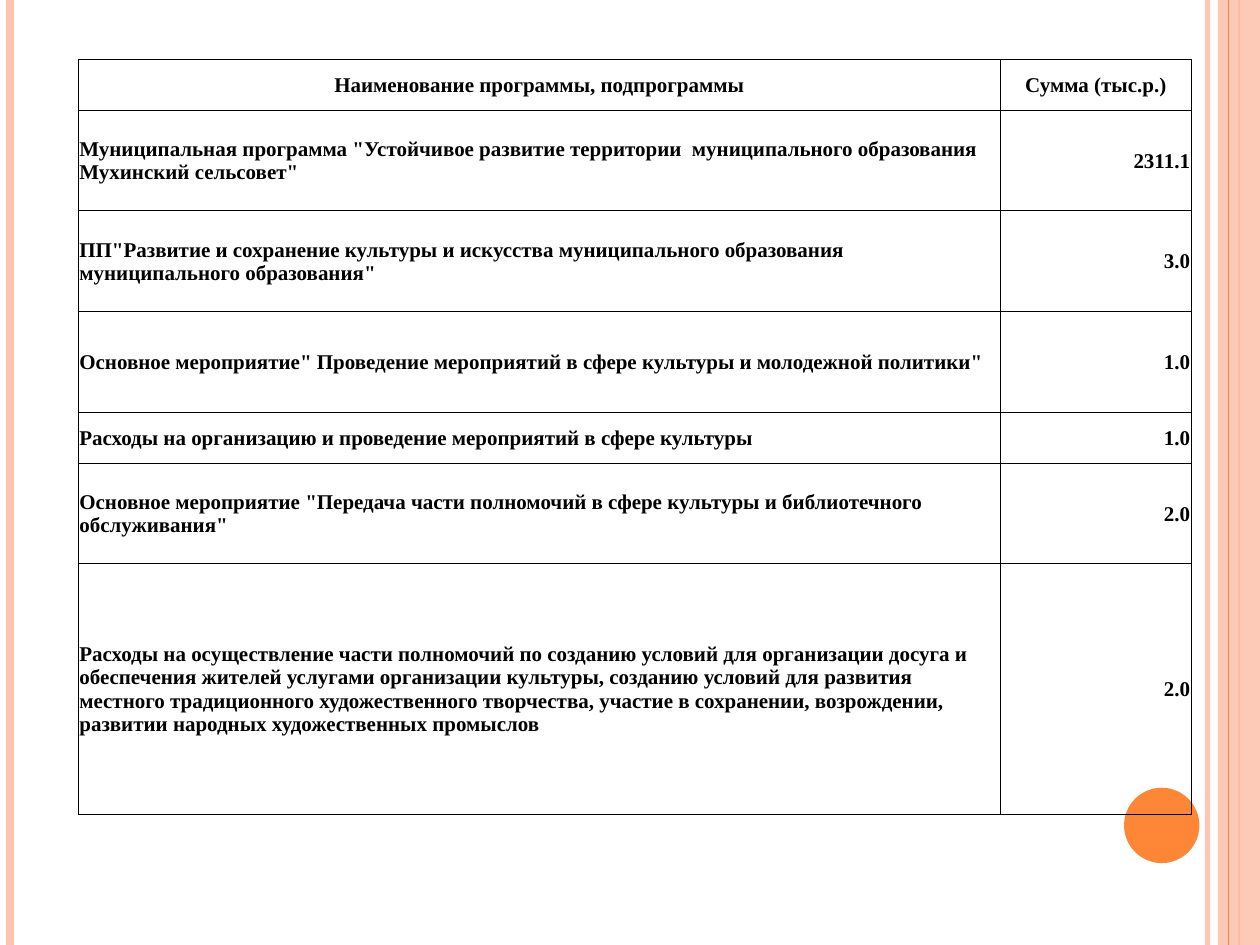
from lxml.etree import SubElement
from pptx import Presentation
from pptx.dml.color import RGBColor
from pptx.enum.shapes import MSO_CONNECTOR, MSO_SHAPE
from pptx.enum.text import MSO_ANCHOR, PP_ALIGN
from pptx.oxml.ns import qn
from pptx.util import Cm, Pt

COLORS = {"peach": "FEC3AE", "orange": "FE8637", "text": "000000", "border": "000000"}
WIDTH, HEIGHT = 25.4, 19.05

HEADER = ("Наименование программы, подпрограммы", "Сумма (тыс.р.)")
PROGRAMS = [
    ('Муниципальная программа "Устойчивое развитие территории  муниципального образования '
     'Мухинский сельсовет"', "2311.1"),
    ('ПП"Развитие и сохранение культуры и искусства муниципального образования '
     'муниципального образования"', "3.0"),
    ('Основное мероприятие" Проведение мероприятий в сфере культуры и молодежной политики"', "1.0"),
    ("Расходы на организацию и проведение мероприятий в сфере культуры", "1.0"),
    ('Основное мероприятие "Передача части полномочий в сфере культуры и библиотечного '
     'обслуживания"', "2.0"),
    ("Расходы на осуществление части полномочий по созданию условий для организации досуга и "
     "обеспечения жителей услугами организации культуры, созданию условий для развития "
     "местного традиционного художественного творчества, участие в сохранении, возрождении, "
     "развитии народных художественных промыслов", "2.0"),
]
COL_WIDTHS = (18.59, 3.84)
ROW_HEIGHTS = (1.03, 2.03, 2.03, 2.03, 1.03, 2.03, 5.05)
COL_ALIGNS = (PP_ALIGN.LEFT, PP_ALIGN.RIGHT)

STRIPES = [
    (24.34, "peach", 3, 93),
    (0.21, "peach", 4.5, 100),
    (24.98, "orange", 1.5, 100),
]
EDGE_LINE = (24.77, "orange", 0.75, 100)
BAND = (MSO_SHAPE.RECTANGLE, 24.55, 0, 0.85, HEIGHT, "peach", 87)
CIRCLE = (MSO_SHAPE.OVAL, 22.66, 15.88, 1.52, 1.52, "orange", 100)

CELL_FORMAT = {
    "vertical_anchor": MSO_ANCHOR.MIDDLE,
    "margin_left": Cm(0.02),
    "margin_right": Cm(0.02),
    "margin_top": Cm(0.02),
    "margin_bottom": 0,
}
FONT_FORMAT = {"name": "Times New Roman", "size": Pt(12), "bold": True}


def set_format(obj, values):
    for name, value in values.items():
        setattr(obj, name, value)


def set_color(fill, color, opacity=100):
    fill.solid()
    fill.fore_color.rgb = RGBColor.from_string(COLORS[color])
    if opacity < 100:
        for clr in fill._xPr.iter(qn("a:srgbClr")):
            SubElement(clr, qn("a:alpha"), val=str(opacity * 1000))


def add_stripe(s, x, color, weight, opacity):
    line = s.shapes.add_connector(MSO_CONNECTOR.STRAIGHT, Cm(x), 0, Cm(x), Cm(HEIGHT))
    line.line.width = Pt(weight)
    set_color(line.line.fill, color, opacity)
    SubElement(line._element.spPr, qn("a:effectLst"))


def add_figure(s, kind, x, y, w, h, color, opacity):
    sp = s.shapes.add_shape(kind, Cm(x), Cm(y), Cm(w), Cm(h))
    sp.shadow.inherit = False
    set_color(sp.fill, color, opacity)
    sp.line.fill.background()


def add_borders(cell):
    tc_pr = cell._tc.get_or_add_tcPr()
    for side in ("lnL", "lnR", "lnT", "lnB"):
        ln = SubElement(tc_pr, qn(f"a:{side}"), w=str(Pt(0.5)))
        fill = SubElement(ln, qn("a:solidFill"))
        SubElement(fill, qn("a:srgbClr"), val=COLORS["border"])


def fill_cell(cell, text, align):
    set_format(cell, CELL_FORMAT)
    add_borders(cell)
    cell.fill.background()
    p = cell.text_frame.paragraphs[0]
    p.alignment = align
    r = p.add_run()
    r.text = text
    set_format(r.font, FONT_FORMAT)
    r.font.color.rgb = RGBColor.from_string(COLORS["text"])


def add_program_table(s):
    rows = [HEADER, *PROGRAMS]
    frame = s.shapes.add_table(len(rows), len(COL_WIDTHS), Cm(1.58), Cm(1.19),
                               Cm(sum(COL_WIDTHS)), Cm(sum(ROW_HEIGHTS)))
    table = frame.table
    set_format(table, {"first_row": False, "horz_banding": False})
    for col, width in zip(table.columns, COL_WIDTHS):
        col.width = Cm(width)
    for i, (row, height, texts) in enumerate(zip(table.rows, ROW_HEIGHTS, rows)):
        row.height = Cm(height)
        for cell, text, align in zip(row.cells, texts, COL_ALIGNS):
            fill_cell(cell, text, align if i else PP_ALIGN.CENTER)


def main():
    prs = Presentation()
    set_format(prs, {"slide_width": Cm(WIDTH), "slide_height": Cm(HEIGHT)})
    s = prs.slides.add_slide(prs.slide_layouts[6])
    for stripe in STRIPES:
        add_stripe(s, *stripe)
    add_figure(s, *BAND)
    add_stripe(s, *EDGE_LINE)
    add_figure(s, *CIRCLE)
    add_program_table(s)
    prs.save("out.pptx")


if __name__ == "__main__":
    main()
